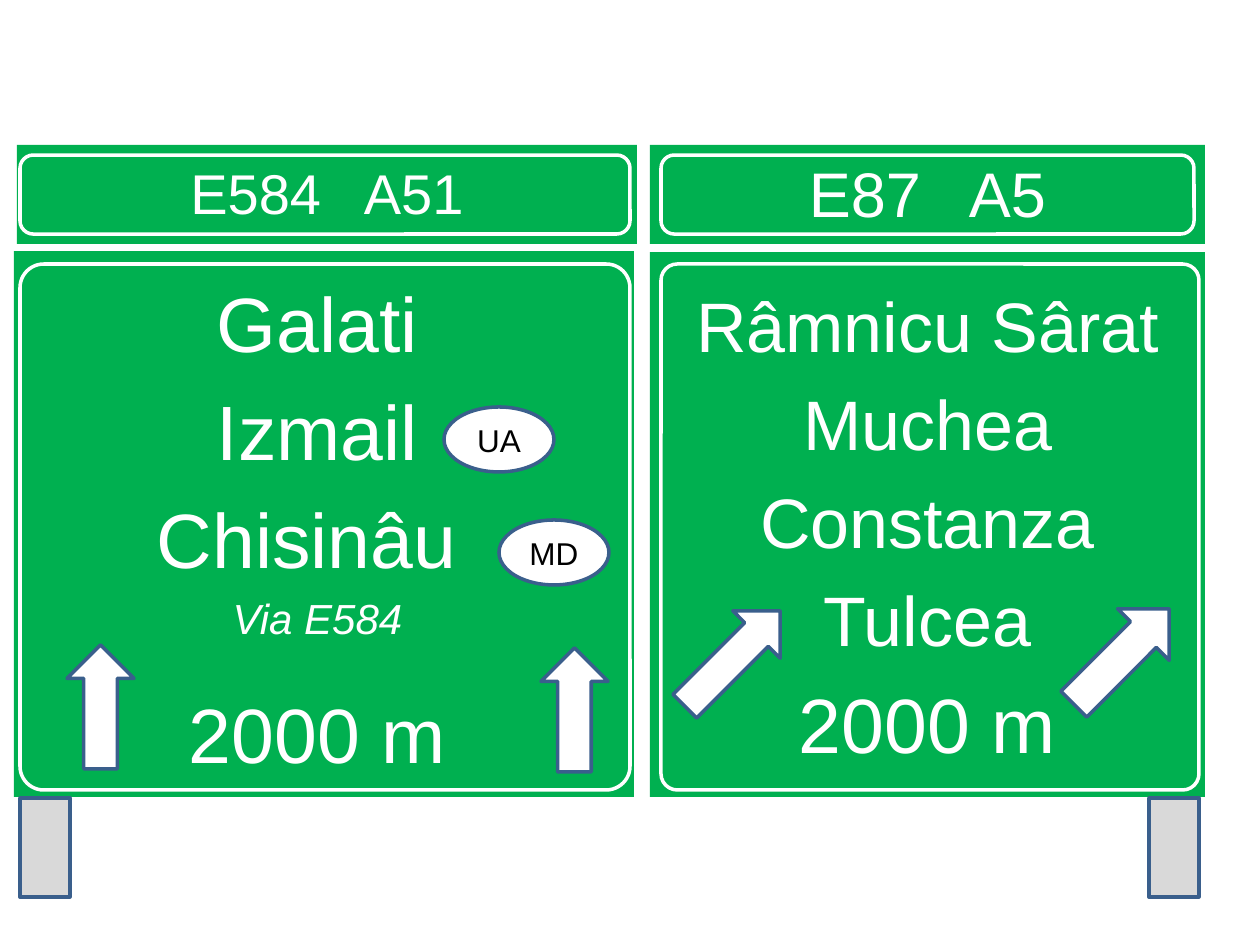
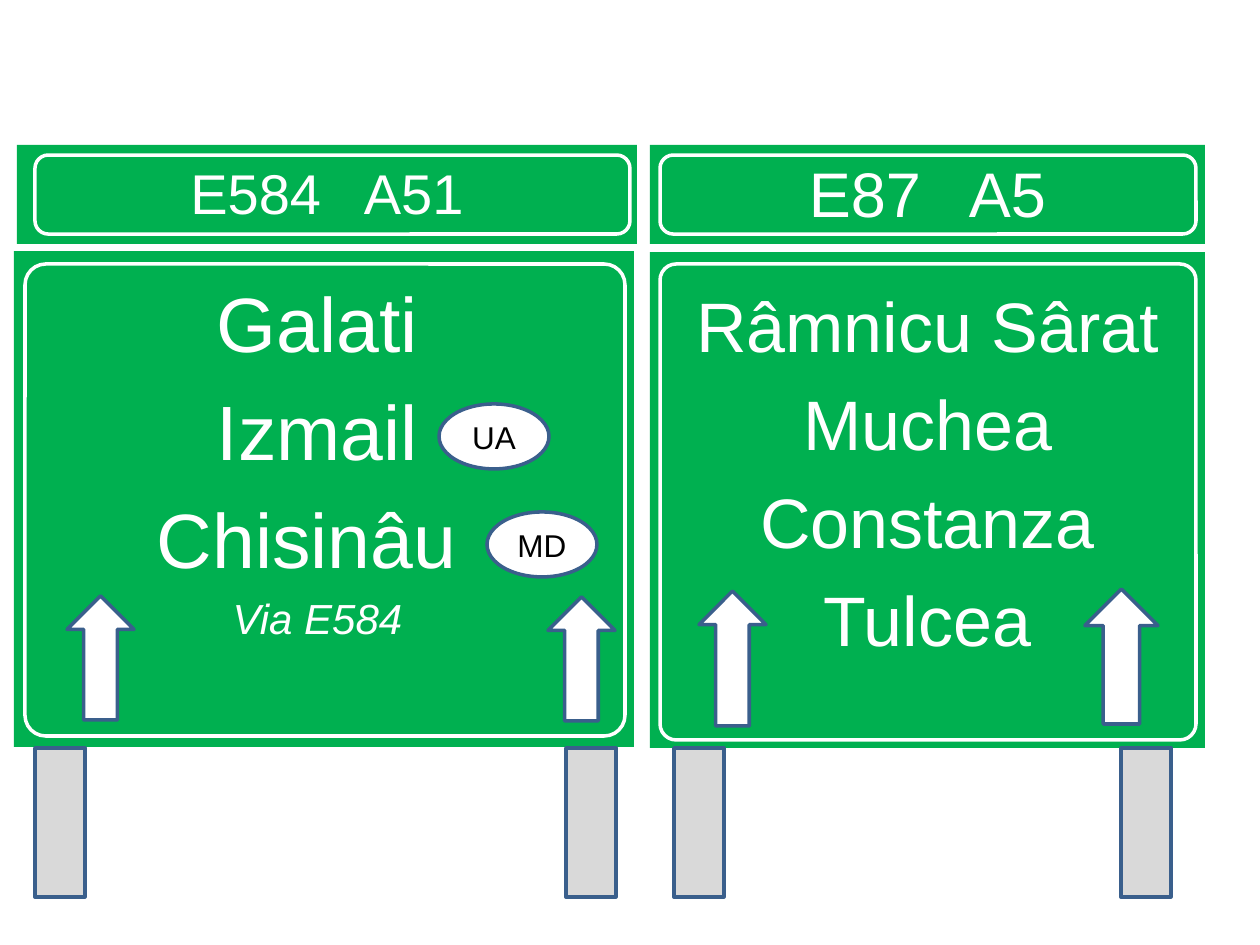
import pptx
import pptx.dml.color
import pptx.enum.shapes
import pptx.enum.text
import pptx.util

SHAPE = pptx.enum.shapes.MSO_SHAPE
ANCHOR = pptx.enum.text.MSO_ANCHOR
PX_PER_INCH = 126


def px(length):
    return pptx.util.Emu(round(length * 914400 / PX_PER_INCH))


def colour(hex_string):
    return pptx.dml.color.RGBColor.from_string(hex_string)


class SignBoard:
    GREEN, WHITE, BLACK = "00B050", "FFFFFF", "000000"
    STEEL, GREY = "3A5F8C", "D9D9D9"
    FONT = "Arial"
    GAP_RATIO = 0.2
    CODE_GAP_RATIO = 0.48

    def __init__(self):
        self.deck = pptx.Presentation()
        self.deck.slide_width = px(1260)
        self.deck.slide_height = px(945)
        self.slide = None

    def new_slide(self):
        self.slide = self.deck.slides.add_slide(self.deck.slide_layouts[6])

    def outline(self, kind, box, fill=None, line=None):
        shape = self.slide.shapes.add_shape(kind, *map(px, box))
        shape.shadow.inherit = False
        if fill:
            shape.fill.solid()
            shape.fill.fore_color.rgb = colour(fill)
        else:
            shape.fill.background()
        if line:
            shape.line.color.rgb = colour(line)
            shape.line.width = pptx.util.Pt(2)
        else:
            shape.line.fill.background()
        return shape

    def text_area(self, shape, insets, anchor):
        frame = shape.text_frame
        frame.word_wrap = True
        frame.vertical_anchor = anchor
        (frame.margin_left, frame.margin_top,
         frame.margin_right, frame.margin_bottom) = map(px, insets)
        return frame

    def run(self, paragraph, text, size, ink=WHITE, italic=False):
        run = paragraph.add_run()
        run.text = text
        run.font.name = self.FONT
        run.font.size = pptx.util.Pt(size)
        run.font.italic = italic
        run.font.color.rgb = colour(ink)
        paragraph.alignment = pptx.enum.text.PP_ALIGN.CENTER
        return run

    def route_bar(self, box, codes, size):
        bar = self.outline(SHAPE.RECTANGLE, box, self.GREEN)
        frame = self.text_area(bar, (13, 15, 13, 20), ANCHOR.MIDDLE)
        paragraph = frame.paragraphs[0]
        european, motorway = codes
        self.run(paragraph, european, size)
        gap = self.run(paragraph, " ", size)
        tracking = round(self.CODE_GAP_RATIO * size * 100)
        gap.font._element.set("spc", str(tracking))
        self.run(paragraph, motorway, size)

    def destinations(self, box, insets, lines):
        panel = self.outline(SHAPE.RECTANGLE, box, self.GREEN)
        frame = self.text_area(panel, insets, ANCHOR.TOP)
        for index, (text, size, italic, extra_gap) in enumerate(lines):
            paragraph = frame.add_paragraph() if index else frame.paragraphs[0]
            if index:
                paragraph.space_before = pptx.util.Pt(size * self.GAP_RATIO + extra_gap)
            self.run(paragraph, text, size, italic=italic)

    def border(self, box, corner=0.167):
        self.outline(SHAPE.ROUNDED_RECTANGLE, box, line=self.WHITE).adjustments[0] = corner

    def arrow(self, box, kind=SHAPE.UP_ARROW, turn=0):
        self.outline(kind, box, self.WHITE, self.STEEL).rotation = turn

    def post(self, left, top, height):
        self.outline(SHAPE.RECTANGLE, (left, top, 50, height), self.GREY, self.STEEL)

    def country(self, left, top, code):
        badge = self.outline(SHAPE.OVAL, (left, top, 110, 65), self.WHITE, self.STEEL)
        frame = self.text_area(badge, (0, 0, 0, 0), ANCHOR.MIDDLE)
        self.run(frame.paragraphs[0], code, 18, self.BLACK)


AHEAD = [("Galati", 44, False, 0), ("Izmail", 44, False, 0),
         ("Chisinâu ", 44, False, 0), ("Via E584", 24, True, 0)]
EXIT = [(town, 40, False, 0)
        for town in ("Râmnicu Sârat", "Muchea", "Constanza", "Tulcea")]

SIGNS = [
    {
        "distance": "2000 m", "bottoms": (797, 797), "exit_turn": 315,
        "ahead_arrows": [(67, 645), (541, 648)],
        "countries": [(444, 407, "UA"), (499, 520, "MD")],
        "posts": [(20, 798, 99), (1149, 798, 99)],
        "borders": [((20, 155, 610, 79),), ((661, 155, 533, 79),),
                    ((20, 264, 610, 526), 0.045), ((661, 264, 538, 526), 0.031)],
    },
    {
        "distance": None, "bottoms": (747, 748), "exit_turn": 270,
        "ahead_arrows": [(67, 596), (548, 597)],
        "countries": [(439, 404, "UA"), (487, 512, "MD")],
        "posts": [(left, 748, 149) for left in (35, 566, 674, 1121)],
        "borders": [((35, 155, 595, 79),), ((660, 155, 536, 79),),
                    ((25, 264, 600, 472), 0.044), ((660, 264, 536, 476), 0.034)],
    },
]


def draw_sign(board, sign):
    board.new_slide()
    ahead_lines, exit_lines = list(AHEAD), list(EXIT)
    if sign["distance"]:
        ahead_lines.append((sign["distance"], 44, False, 16))
        exit_lines.append((sign["distance"], 44, False, 0))
    ahead_bottom, exit_bottom = sign["bottoms"]

    board.route_bar((650, 145, 555, 99), ("E87", "A5"), 36)
    board.destinations((650, 252, 555, exit_bottom - 252), (13, 31, 13, 6), exit_lines)
    board.route_bar((17, 145, 620, 99), ("E584", "A51"), 32)
    board.destinations((14, 251, 620, ahead_bottom - 251), (0, 25, 13, 10), ahead_lines)

    for box in ((665, 625, 135, 67), (1054, 620, 135, 73)):
        board.arrow(box, SHAPE.RIGHT_ARROW, sign["exit_turn"])
    for left, top in sign["ahead_arrows"]:
        board.arrow((left, top, 67, 124))
    for post in sign["posts"]:
        board.post(*post)
    for country in sign["countries"]:
        board.country(*country)
    for border in sign["borders"]:
        board.border(*border)


def main():
    board = SignBoard()
    for sign in SIGNS:
        draw_sign(board, sign)
    board.deck.save("out.pptx")


if __name__ == "__main__":
    main()
